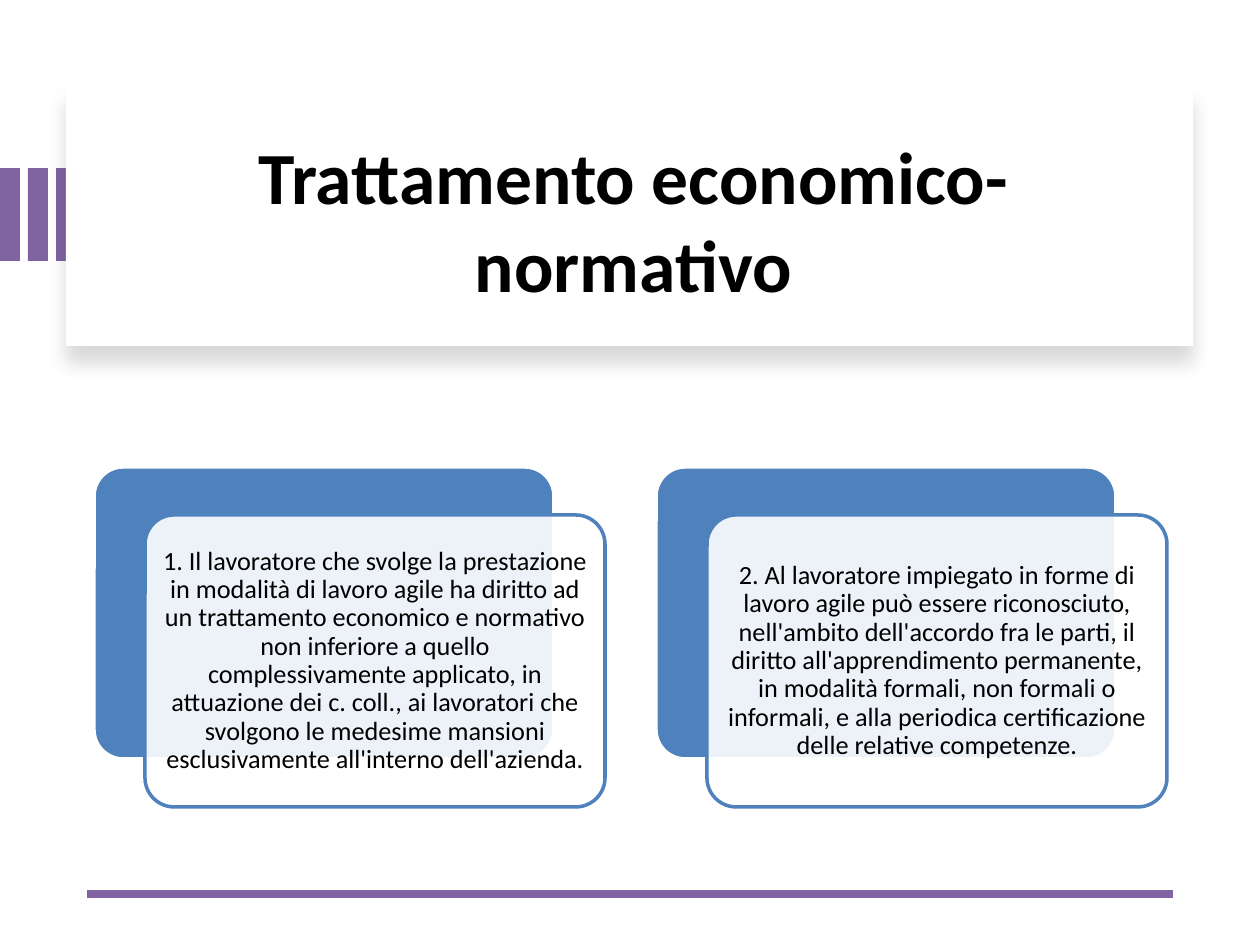
from pptx import Presentation
from pptx.dml.color import RGBColor
from pptx.enum.shapes import MSO_CONNECTOR as CONN, MSO_SHAPE as SHAPE
from pptx.enum.text import MSO_ANCHOR as ANCHOR, PP_ALIGN as ALIGN
from pptx.oxml import parse_xml
from pptx.oxml.ns import nsdecls
from pptx.util import Pt

SCALE = 914400 / 126
PURPLE, BLUE, WHITE, BLACK = "8064A2", "4F81BD", "FFFFFF", "000000"


def px(*nums):
    return [round(n * SCALE) for n in nums]


def rgb(code):
    return RGBColor.from_string(code)


prs = Presentation()
prs.slide_width, prs.slide_height = px(1260, 945)
slide = prs.slides.add_slide(prs.slide_layouts[5])
shapes = slide.shapes

# Purple bars at the left edge
for i in range(3):
    bar = shapes.add_shape(SHAPE.RECTANGLE, *px(i * 28, 168, 20, 93))
    bar.shadow.inherit = False
    bar.fill.solid()
    bar.fill.fore_color.rgb = rgb(PURPLE)
    bar.line.fill.background()

# White title panel with a soft shadow
panel = shapes.add_shape(SHAPE.RECTANGLE, *px(66, 85, 1127, 261))
panel.fill.solid()
panel.fill.fore_color.rgb = rgb(WHITE)
panel.line.fill.background()
panel._element.spPr.append(parse_xml(
    f'<a:effectLst {nsdecls("a")}><a:outerShdw blurRad="{Pt(11)}" dist="{Pt(10)}" '
    f'dir="5400000" algn="t" rotWithShape="0"><a:srgbClr val="{BLACK}">'
    '<a:alpha val="15000"/></a:srgbClr></a:outerShdw></a:effectLst>'))

# Title, brought in front of the panel
title = shapes.title
title.left, title.top, title.width, title.height = px(108, 112, 1051, 214)
panel._element.addnext(title._element)
frame = title.text_frame
frame.text = "Trattamento economico-normativo"
frame.vertical_anchor = ANCHOR.MIDDLE
par = frame.paragraphs[0]
par.alignment = ALIGN.CENTER
par.font.name, par.font.size, par.font.bold = "Calibri", Pt(42), True
par.font.color.rgb = rgb(BLACK)

# Rule at the bottom
x1, y1, x2, y2 = px(1173, 894, 87, 894)
rule = shapes.add_connector(CONN.STRAIGHT, x1, y1, x2, y2)
rule.line.color.rgb = rgb(PURPLE)
rule.line.width = Pt(4.5)
rule._element.spPr.append(parse_xml(f'<a:effectLst {nsdecls("a")}/>'))

# Two cards, each a blue back and a translucent front with text
texts = [
    "1. Il lavoratore che svolge la prestazione in modalità di lavoro agile ha "
    "diritto ad un trattamento economico e normativo non inferiore a quello "
    "complessivamente applicato, in attuazione dei c. coll., ai lavoratori che "
    "svolgono le medesime mansioni esclusivamente all'interno dell'azienda.",
    "2. Al lavoratore impiegato in forme di lavoro agile può essere riconosciuto, "
    "nell'ambito dell'accordo fra le parti, il diritto all'apprendimento "
    "permanente, in modalità formali, non formali o informali, e alla periodica "
    "certificazione delle relative competenze.",
]
for i, text in enumerate(texts):
    left = 94 + i * 562
    for x, y, fill, line in ((left, 467, BLUE, WHITE), (left + 51, 515, WHITE, BLUE)):
        card = shapes.add_shape(SHAPE.ROUNDED_RECTANGLE, *px(x, y, 460, 292))
        card.adjustments[0] = 0.1
        card.shadow.inherit = False
        card.fill.solid()
        card.fill.fore_color.rgb = rgb(fill)
        card.line.color.rgb = rgb(line)
        card.line.width = Pt(2)

    # The last card made is the front one
    tint = card._element.spPr.solidFill[0]
    tint.append(parse_xml(f'<a:alpha {nsdecls("a")} val="90000"/>'))
    frame = card.text_frame
    frame.word_wrap = True
    frame.vertical_anchor = ANCHOR.MIDDLE
    (frame.margin_left, frame.margin_top,
     frame.margin_right, frame.margin_bottom) = px(8, 8, 8, 8)
    frame.text = text
    par = frame.paragraphs[0]
    par.alignment = ALIGN.CENTER
    par.line_spacing = 0.9
    par.space_after = Pt(5)
    par.font.name, par.font.size = "Calibri", Pt(15)
    par.font.color.rgb = rgb(BLACK)

prs.save("out.pptx")
